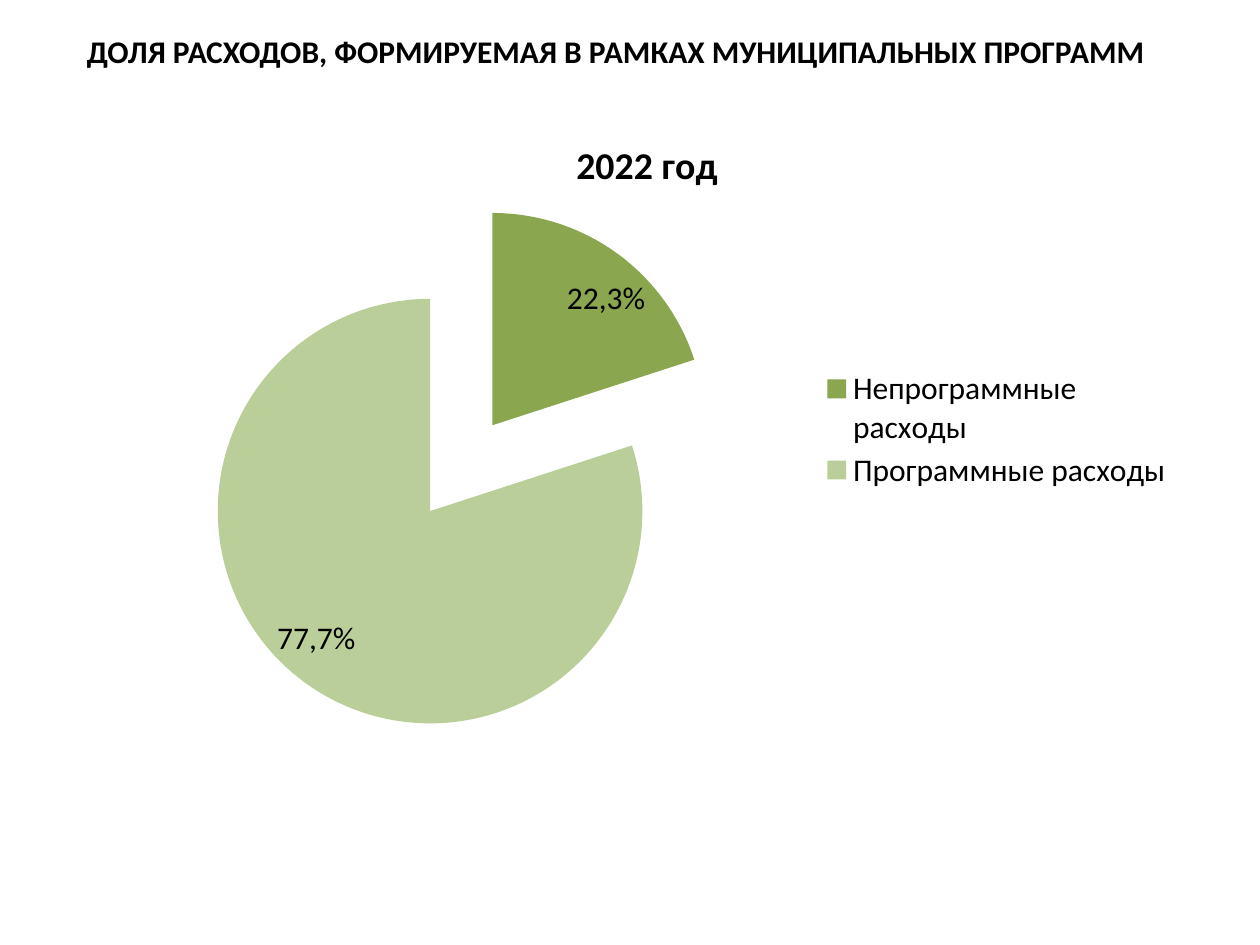
from lxml.etree import SubElement
from pptx import Presentation
from pptx.chart.data import CategoryChartData
from pptx.dml.color import RGBColor
from pptx.enum.chart import XL_CHART_TYPE, XL_LABEL_POSITION, XL_LEGEND_POSITION
from pptx.enum.text import MSO_ANCHOR, PP_ALIGN
from pptx.oxml.ns import qn
from pptx.util import Inches, Pt

COLORS = {"text": "000000", "other": "8AA64F", "programme": "B9CE99"}
# category, value, label, colour, direction of the label's shift
SLICES = [
    ("Непрограммные расходы", 20, "22,3%", "other", 1),
    ("Программные расходы", 80, "77,7%", "programme", -1),
]
BODY = {"name": "Calibri", "size": Pt(18), "bold": False}
HEADING = {**BODY, "bold": True}
CHART_TITLE = {**HEADING, "size": Pt(21.6)}
EDGE = {"xMode": "edge", "yMode": "edge"}


def rgb(name):
    return RGBColor.from_string(COLORS[name])


def format_font(font, values):
    for key, value in values.items():
        setattr(font, key, value)
    font.color.rgb = rgb("text")


def box(prs, x, y, w, h):
    """Turn shares of the slide's size into lengths."""
    return (int(prs.slide_width * x), int(prs.slide_height * y),
            int(prs.slide_width * w), int(prs.slide_height * h))


def add_title(prs, s, text, place):
    title = s.shapes.title
    title.left, title.top, title.width, title.height = box(prs, *place)
    tf = title.text_frame
    tf.word_wrap = True
    tf.vertical_anchor = MSO_ANCHOR.TOP
    p = tf.paragraphs[0]
    p.alignment = PP_ALIGN.LEFT
    r = p.add_run()
    r.text = text
    format_font(r.font, HEADING)


def set_layout(element, values, after=None):
    """Place a chart part by shares of the chart's size."""
    for old in element.findall(qn("c:layout")):
        element.remove(old)
    layout = element.makeelement(qn("c:layout"))
    if after:
        element.find(qn(after)).addnext(layout)
    else:
        element.insert(0, layout)
    manual = SubElement(layout, qn("c:manualLayout"))
    for tag, value in values.items():
        SubElement(manual, qn(f"c:{tag}")).set("val", str(value))


def format_slices(series):
    for i, (_, _, text, color, shift) in enumerate(SLICES):
        point = series.points[i]
        point.format.fill.solid()
        point.format.fill.fore_color.rgb = rgb(color)
        label = point.data_label
        r = label.text_frame.paragraphs[0].add_run()
        r.text = text
        format_font(r.font, BODY)
        label.position = XL_LABEL_POSITION.INSIDE_END
    # Shift the labels along the rim
    for node, row in zip(series._element.iter(qn("c:dLbl")), SLICES):
        set_layout(node, {"x": 0.03 * row[-1], "y": 0.03 * row[-1]}, "c:idx")
    # Pull all slices away from the centre
    first = series._element.find(qn("c:dPt"))
    explosion = first.makeelement(qn("c:explosion"))
    explosion.set("val", "25")
    first.addprevious(explosion)


def add_pie(prs, s, title, place):
    data = CategoryChartData(number_format="0")
    data.categories = [row[0] for row in SLICES]
    data.add_series(title, [row[1] for row in SLICES])
    chart = s.shapes.add_chart(XL_CHART_TYPE.PIE, *box(prs, *place), data).chart
    format_font(chart.font, BODY)

    # Chart title
    chart.has_title = True
    r = chart.chart_title.text_frame.paragraphs[0].add_run()
    r.text = title
    format_font(r.font, CHART_TITLE)
    set_layout(chart.chart_title._element, {**EDGE, "x": 0.43, "y": 0.04}, "c:tx")

    # Slices and labels
    plot = chart.plots[0]
    plot.vary_by_categories = True
    format_slices(plot.series[0])
    set_layout(chart._chartSpace.chart.plotArea,
               {"layoutTarget": "inner", **EDGE,
                "x": 0.08, "y": 0.15, "w": 0.5, "h": 0.82})

    # Legend
    chart.has_legend = True
    legend = chart.legend
    legend.position = XL_LEGEND_POSITION.RIGHT
    legend.include_in_layout = False
    format_font(legend.font, BODY)
    set_layout(legend._element,
               {**EDGE, "x": 0.66, "y": 0.4, "w": 0.33, "h": 0.2}, "c:legendPos")


def main():
    prs = Presentation()
    prs.slide_width, prs.slide_height = Inches(10), Inches(7.5)
    s = prs.slides.add_slide(prs.slide_layouts[5])
    add_title(prs, s, "ДОЛЯ РАСХОДОВ, ФОРМИРУЕМАЯ В РАМКАХ МУНИЦИПАЛЬНЫХ ПРОГРАММ",
              (0.059, 0.027, 0.913, 0.053))
    add_pie(prs, s, "2022 год", (0.083, 0.112, 0.858, 0.685))
    prs.save("out.pptx")


if __name__ == "__main__":
    main()
